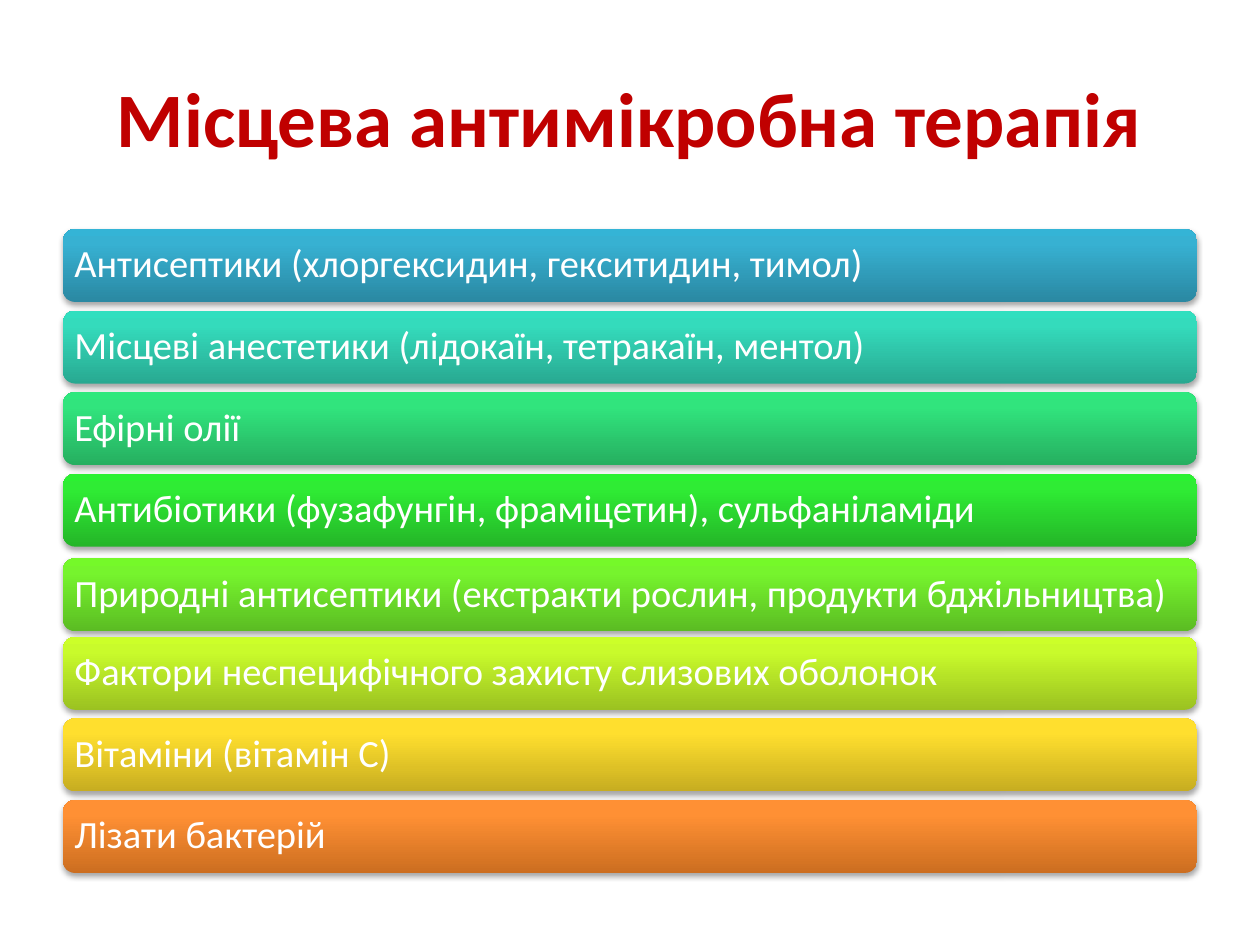
from dataclasses import dataclass

from lxml import etree
from pptx import Presentation
from pptx.dml.color import RGBColor
from pptx.enum.shapes import MSO_SHAPE
from pptx.enum.text import MSO_ANCHOR, PP_ALIGN
from pptx.oxml.ns import qn
from pptx.util import Pt

ROUNDED = MSO_SHAPE.ROUNDED_RECTANGLE
MIDDLE = MSO_ANCHOR.MIDDLE
LEFT, CENTER = PP_ALIGN.LEFT, PP_ALIGN.CENTER
PX_PER_INCH = 126


@dataclass(frozen=True)
class Theme:
    font: str = "Calibri"
    title_color: str = "C00000"
    bar_text_color: str = "FFFFFF"
    shadow_color: str = "000000"
    title_size: int = 44
    bar_size: int = 22


THEME = Theme()
TITLE = "Місцева антимікробна терапія"

# Remedy group, gradient colours from bottom to top, shift from the even step in px
REMEDIES = [
    ("Антисептики (хлоргексидин, гекситидин, тимол)", ("2A88A2", "37B1D2", "34B4D6"), 0),
    ("Місцеві анестетики (лідокаїн, тетракаїн, ментол)", ("28A991", "34DBBC", "31DFBF"), 0),
    ("Ефірні олії", ("26AF60", "31E47D", "2EE87D"), 0),
    ("Антибіотики (фузафунгін, фраміцетин), сульфаніламіди", ("24B628", "2FEC34", "2BF131"), 0),
    ("Природні антисептики (екстракти рослин, продукти бджільництва)",
     ("5BBC23", "76F42D", "75F929"), 3),
    ("Фактори неспецифічного захисту слизових оболонок", ("9BC221", "C9FB2B", "CCFF29"), 0),
    ("Вітаміни (вітамін С)", ("C7AD21", "FFDF2E", "FFDF2F"), 0),
    ("Лізати бактерій", ("CC6E20", "FF9034", "FF9136"), 0),
]


def px(length):
    return round(length * 914400 / PX_PER_INCH)


def write_text(shape, text, *, size, color, bold=False, align=LEFT, spacing=1.0, inset=12):
    frame = shape.text_frame
    frame.word_wrap = True
    frame.vertical_anchor = MIDDLE
    frame.margin_left = frame.margin_right = px(inset)
    frame.margin_top = frame.margin_bottom = px(6)
    paragraph = frame.paragraphs[0]
    paragraph.alignment = align
    paragraph.line_spacing = spacing
    run = paragraph.add_run()
    run.text = text
    run.font.name = THEME.font
    run.font.size = Pt(size)
    run.font.bold = bold
    run.font.color.rgb = RGBColor.from_string(color)


def add_color(parent, color):
    return etree.SubElement(parent, qn("a:srgbClr"), val=color)


def fill_gradient(shape, colors):
    shape.fill.gradient()
    shape.fill.gradient_angle = 90
    stops = shape._element.spPr.find(qn("a:gradFill")).find(qn("a:gsLst"))
    for stop in list(stops):
        stops.remove(stop)
    for percent, color in zip((0, 80, 100), colors):
        add_color(etree.SubElement(stops, qn("a:gs"), pos=str(percent * 1000)), color)


def cast_shadow(shape):
    shape.shadow.inherit = False
    effects = shape._element.spPr.find(qn("a:effectLst"))
    shadow = etree.SubElement(effects, qn("a:outerShdw"), blurRad="40000", dist="23000",
                              dir="5400000", rotWithShape="0")
    etree.SubElement(add_color(shadow, THEME.shadow_color), qn("a:alpha"), val="35000")


def add_title(slide, left, top, width, height):
    title = slide.shapes.add_textbox(px(left), px(top), px(width), px(height))
    write_text(title, TITLE, size=THEME.title_size, color=THEME.title_color,
               bold=True, align=CENTER)


def add_remedy_bars(slide, left, top, width, height, bar_height=73):
    step = (height - bar_height) / (len(REMEDIES) - 1)
    for index, (remedy, colors, shift) in enumerate(REMEDIES):
        bar = slide.shapes.add_shape(ROUNDED, px(left), px(top + index * step + shift),
                                     px(width), px(bar_height))
        fill_gradient(bar, colors)
        bar.line.fill.background()
        cast_shadow(bar)
        write_text(bar, remedy, size=THEME.bar_size, color=THEME.bar_text_color,
                   spacing=0.9, inset=8)


def main():
    presentation = Presentation()
    presentation.slide_width, presentation.slide_height = px(1260), px(945)
    slide = presentation.slides.add_slide(presentation.slide_layouts[6])
    # Heading
    add_title(slide, 63, 38, 1134, 157)
    # Stack of remedy groups
    add_remedy_bars(slide, 63, 229, 1134, 644)
    presentation.save("out.pptx")


if __name__ == "__main__":
    main()
